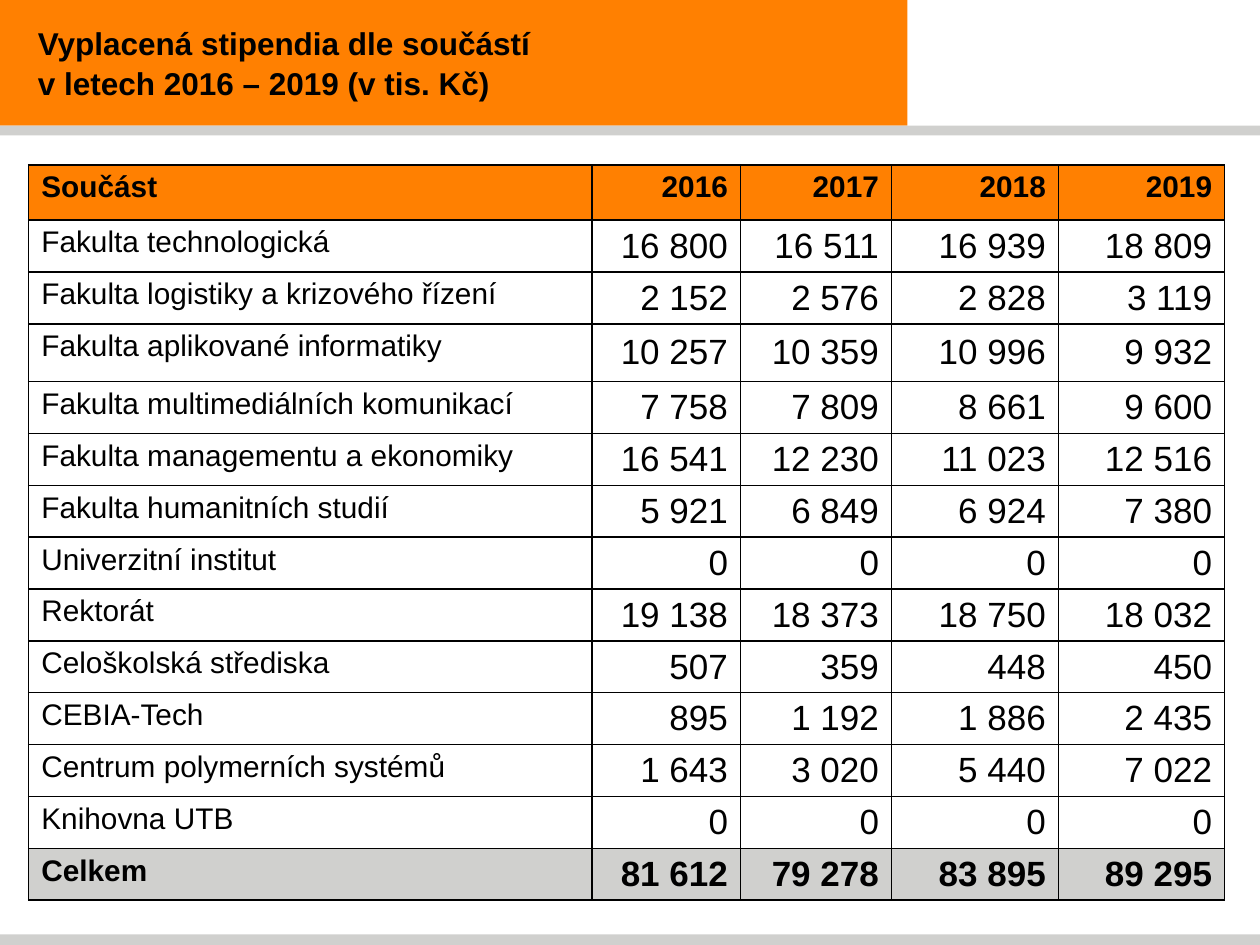
"""Build the slide of paid scholarships by university unit, 2016 to 2019."""
from typing import NamedTuple

from lxml.etree import SubElement
from pptx import Presentation
from pptx.dml.color import RGBColor
from pptx.enum.shapes import MSO_SHAPE
from pptx.enum.text import MSO_ANCHOR, MSO_AUTO_SIZE, PP_ALIGN
from pptx.oxml.ns import qn
from pptx.util import Pt

HUES = {"orange": "FF8001", "gray": "D0D0CE", "white": "FFFFFF", "black": "000000"}


class Bar(NamedTuple):
    left: float
    top: float
    width: float
    height: float
    hue: str


BARS = [
    Bar(0, 0, 518.6, 71.8, "orange"),
    Bar(0, 534, 720, 6, "gray"),
    Bar(0, 71.8, 720, 5.6, "gray"),
]
TITLE = ["Vyplacená stipendia dle součástí", "v letech 2016 – 2019 (v tis. Kč)"]
ROWS = [
    ("Součást", "2016", "2017", "2018", "2019"),
    ("Fakulta technologická", "16 800", "16 511", "16 939", "18 809"),
    ("Fakulta logistiky a krizového řízení", "2 152", "2 576", "2 828", "3 119"),
    ("Fakulta aplikované informatiky", "10 257", "10 359", "10 996", "9 932"),
    ("Fakulta multimediálních komunikací", "7 758", "7 809", "8 661", "9 600"),
    ("Fakulta managementu a ekonomiky", "16 541", "12 230", "11 023", "12 516"),
    ("Fakulta humanitních studií", "5 921", "6 849", "6 924", "7 380"),
    ("Univerzitní institut", "0", "0", "0", "0"),
    ("Rektorát", "19 138", "18 373", "18 750", "18 032"),
    ("Celoškolská střediska", "507", "359", "448", "450"),
    ("CEBIA-Tech", "895", "1 192", "1 886", "2 435"),
    ("Centrum polymerních systémů", "1 643", "3 020", "5 440", "7 022"),
    ("Knihovna UTB", "0", "0", "0", "0"),
    ("Celkem", "81 612", "79 278", "83 895", "89 295"),
]
WIDTHS = [321.8, 85, 86.3, 95.4, 95]
TALL = {0: 31.5, 3: 33.1}
HIGH = 29.64


def color(hue: str) -> RGBColor:
    """Return the named colour."""
    return RGBColor.from_string(HUES[hue])


def write(frame, lines, *, size, bold=False, align=PP_ALIGN.LEFT, left=0, hang=0, gap=0):
    """Fill a text frame with formatted paragraphs."""
    for i, line in enumerate(lines):
        para = frame.paragraphs[0] if i == 0 else frame.add_paragraph()
        para.text = line
        para.alignment = align
        para.space_before = Pt(gap if i else 0)
        props = para._p.get_or_add_pPr()
        props.set("marL", str(Pt(left)))
        props.set("indent", str(Pt(hang)))
        font = para.runs[0].font
        font.name, font.size, font.bold = "Arial", Pt(size), bold
        font.color.rgb = color("black")


def draw_bar(slide, bar: Bar) -> None:
    """Draw one plain band."""
    shape = slide.shapes.add_shape(MSO_SHAPE.RECTANGLE, *map(Pt, bar[:4]))
    shape.shadow.inherit = False
    shape.fill.solid()
    shape.fill.fore_color.rgb = color(bar.hue)
    shape.line.fill.background()


def draw_title(slide) -> None:
    """Place the title over the orange band."""
    title, band = slide.shapes.title, BARS[0]
    title.left, title.top, title.width, title.height = map(Pt, band[:4])
    slide.shapes._spTree.append(title._element)
    frame = title.text_frame
    frame.word_wrap = True
    frame.auto_size = MSO_AUTO_SIZE.NONE
    frame.vertical_anchor = MSO_ANCHOR.MIDDLE
    write(frame, TITLE, size=18, bold=True, left=14.4, gap=1)


def edge(cell) -> None:
    """Give a cell thin black borders."""
    props = cell._tc.get_or_add_tcPr()
    for i, side in enumerate(("lnL", "lnR", "lnT", "lnB")):
        line = props.makeelement(qn(f"a:{side}"), {"w": str(Pt(1))})
        fill = SubElement(line, qn("a:solidFill"))
        SubElement(fill, qn("a:srgbClr"), val=HUES["black"])
        props.insert(i, line)


def draw_table(slide) -> None:
    """Draw the table of sums with its header and total rows."""
    highs = [TALL.get(i, HIGH) for i in range(len(ROWS))]
    size = (Pt(16.4), Pt(94.3), Pt(sum(WIDTHS)), Pt(sum(highs)))
    table = slide.shapes.add_table(len(ROWS), len(WIDTHS), *size).table
    table.horz_banding = table.first_row = False
    for col, width in zip(table.columns, WIDTHS):
        col.width = Pt(width)
    last = len(ROWS) - 1
    fills = {0: "orange", last: "gray"}
    for r, (row, high) in enumerate(zip(ROWS, highs)):
        table.rows[r].height = Pt(high)
        for c, text in enumerate(row):
            cell = table.cell(r, c)
            sum_cell = r > 0 and c > 0
            cell.margin_left = cell.margin_right = Pt(7.2)
            cell.margin_top = cell.margin_bottom = Pt(3.3)
            cell.vertical_anchor = MSO_ANCHOR.MIDDLE if sum_cell else MSO_ANCHOR.TOP
            cell.fill.solid()
            cell.fill.fore_color.rgb = color(fills.get(r, "white"))
            edge(cell)
            write(cell.text_frame, [text], size=20 if sum_cell else 17, bold=r in fills,
                  align=PP_ALIGN.RIGHT if c else PP_ALIGN.LEFT, left=27, hang=-27)


def main() -> None:
    """Build and save the deck."""
    deck = Presentation()
    deck.slide_width, deck.slide_height = Pt(720), Pt(540)
    slide = deck.slides.add_slide(deck.slide_layouts[5])
    for bar in BARS:
        draw_bar(slide, bar)
    draw_title(slide)
    draw_table(slide)
    deck.save("out.pptx")


if __name__ == "__main__":
    main()
